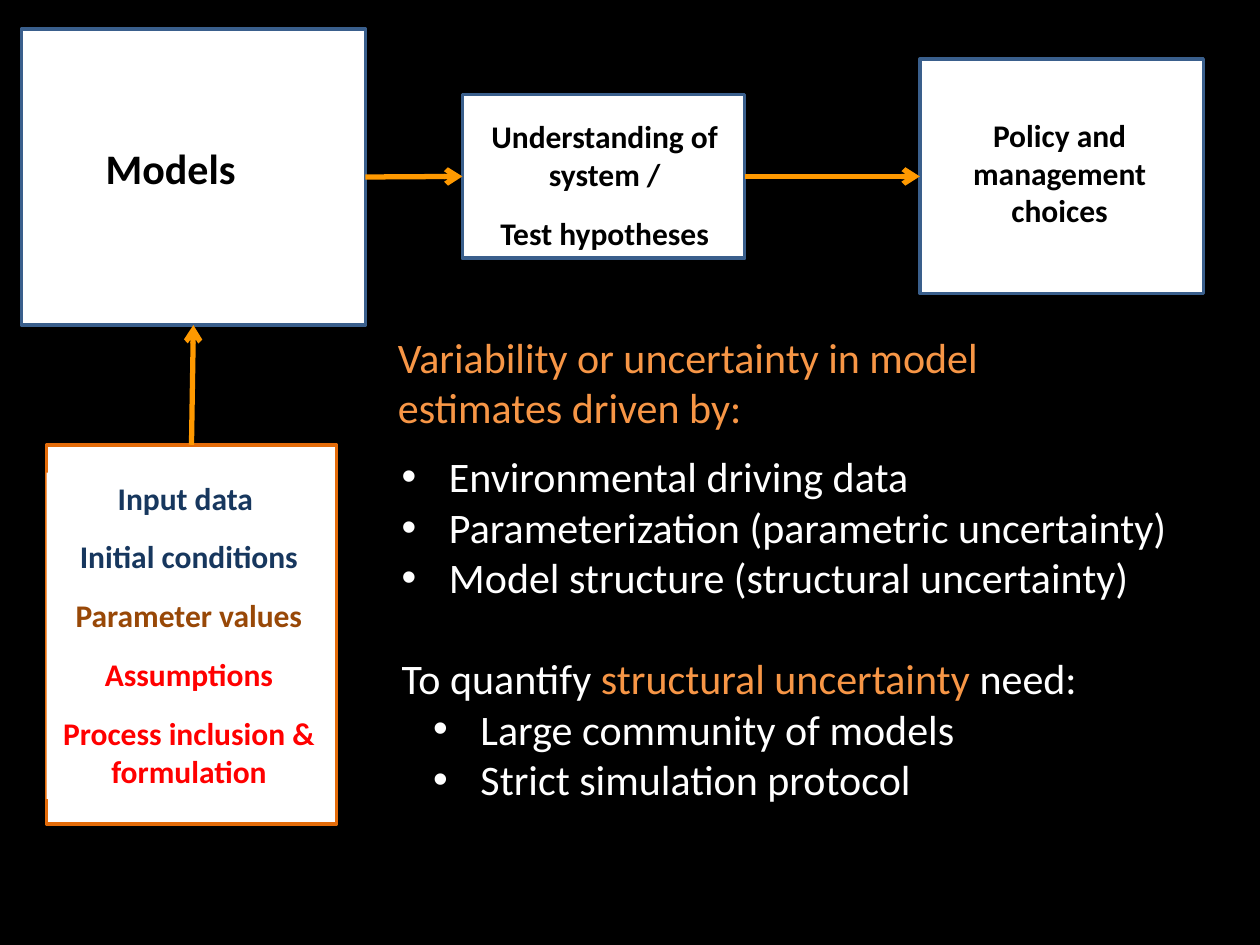
from dataclasses import dataclass

import lxml.etree
import pptx
import pptx.dml.color
import pptx.enum.shapes
import pptx.enum.text
import pptx.oxml.ns
import pptx.util

COLS, ROWS = 100, 75


@dataclass(frozen=True)
class Theme:
    font: str = "Calibri"
    back: str = "000000"
    white: str = "FFFFFF"
    black: str = "000000"
    blue: str = "3A5F8C"
    navy: str = "17375E"
    brown: str = "984807"
    red: str = "FF0000"
    rust: str = "E46C0A"
    amber: str = "FF9900"
    peach: str = "F79646"
    small: int = 18
    large: int = 24
    edge: int = 2
    arrow: int = 3


@dataclass(frozen=True)
class Area:
    col: float
    row: float
    wide: float
    high: float


@dataclass(frozen=True)
class Para:
    runs: tuple
    size: int
    bold: bool = False
    mid: bool = False
    before: float = 0
    after: float = 0
    indent: float = 0


THEME = Theme()
DECK = pptx.Presentation()
DECK.slide_width = pptx.util.Inches(10)
DECK.slide_height = pptx.util.Inches(7.5)


def across(cols: float) -> int:
    return round(DECK.slide_width * cols / COLS)


def down(rows: float) -> int:
    return round(DECK.slide_height * rows / ROWS)


def place(area: Area) -> tuple:
    return across(area.col), down(area.row), across(area.wide), down(area.high)


def tint(code: str) -> pptx.dml.color.RGBColor:
    return pptx.dml.color.RGBColor.from_string(code)


def child(parent, tag: str, **attrs: str) -> None:
    lxml.etree.SubElement(parent, pptx.oxml.ns.qn(tag), **attrs)


def add_box(slide, area: Area, edge: str):
    box = slide.shapes.add_shape(
        pptx.enum.shapes.MSO_SHAPE.FLOWCHART_PROCESS, *place(area))
    box.shadow.inherit = False
    box.fill.solid()
    box.fill.fore_color.rgb = tint(THEME.white)
    box.line.color.rgb = tint(edge)
    box.line.width = pptx.util.Pt(THEME.edge)
    return box


def add_arrow(slide, start, out: int, end, into: int) -> None:
    line = slide.shapes.add_connector(
        pptx.enum.shapes.MSO_CONNECTOR.STRAIGHT, 0, 0, 0, 0)
    line.begin_connect(start, out)
    line.end_connect(end, into)
    line.line.color.rgb = tint(THEME.amber)
    line.line.width = pptx.util.Pt(THEME.arrow)
    child(line.line._get_or_add_ln(), "a:tailEnd", type="arrow")
    child(line._element.spPr, "a:effectLst")


def fill_para(item, para: Para) -> None:
    if para.indent:
        props = item._p.get_or_add_pPr()
        props.set("marL", str(across(para.indent)))
        props.set("indent", str(-across(3.75)))
        child(props, "a:buFont", typeface="Arial")
        child(props, "a:buChar", char="•")
    if para.mid:
        item.alignment = pptx.enum.text.PP_ALIGN.CENTER
    item.space_before = pptx.util.Pt(para.before)
    item.space_after = pptx.util.Pt(para.after)
    item.font.name = THEME.font
    item.font.size = pptx.util.Pt(para.size)
    item.font.bold = para.bold
    if len(para.runs) == 1:
        item.font.color.rgb = tint(para.runs[0][1])
    for text, color in para.runs:
        run = item.add_run()
        run.text = text
        if len(para.runs) > 1:
            run.font.color.rgb = tint(color)


def add_text(slide, area: Area, paras: list[Para], fill: str = "") -> None:
    box = slide.shapes.add_textbox(*place(area))
    if fill:
        box.fill.solid()
        box.fill.fore_color.rgb = tint(fill)
    frame = box.text_frame
    frame.word_wrap = True
    frame.auto_size = pptx.enum.text.MSO_AUTO_SIZE.SHAPE_TO_FIT_TEXT
    for rank, para in enumerate(paras):
        fill_para(frame.add_paragraph() if rank else frame.paragraphs[0], para)


def label(text: str, color: str = THEME.black, after: float = 12) -> Para:
    return Para(((text, color),), THEME.small, bold=True, mid=True, after=after)


def bullet(text: str, indent: float) -> Para:
    return Para(((text, THEME.white),), THEME.large, indent=indent)


def main() -> None:
    slide = DECK.slides.add_slide(DECK.slide_layouts[6])
    slide.background.fill.solid()
    slide.background.fill.fore_color.rgb = tint(THEME.back)

    models = add_box(slide, Area(1.7, 2.3, 27.3, 23.5), THEME.blue)
    add_text(slide, Area(7.4, 10.8, 14.2, 5),
             [Para((("Models", THEME.black),), THEME.large, bold=True)])

    policy = add_box(slide, Area(73, 4.7, 22.5, 18.6), THEME.blue)
    add_text(slide, Area(74.4, 8.7, 19.4, 10.1),
             [label("Policy and management choices", after=0)])

    inputs = add_box(slide, Area(3.7, 35.3, 23, 30.1), THEME.rust)
    add_text(slide, Area(3.7, 37.5, 22.6, 25.9), [
        label("Input data ", THEME.navy),
        label("Initial conditions", THEME.navy),
        label("Parameter values", THEME.brown),
        label("Assumptions", THEME.red),
        label("Process inclusion & formulation", THEME.red),
    ], THEME.white)

    insight = add_box(slide, Area(36.7, 7.5, 22.4, 13), THEME.blue)
    add_text(slide, Area(36.7, 8.8, 22.6, 11.8),
             [label("Understanding of system /"), label("Test hypotheses")])

    add_arrow(slide, inputs, 0, models, 2)
    add_arrow(slide, models, 3, insight, 1)
    add_arrow(slide, insight, 3, policy, 1)

    add_text(slide, Area(30.6, 25.8, 61.4, 9.1), [Para(
        (("Variability or uncertainty in model estimates driven by:",
          THEME.peach),), THEME.large)])
    add_text(slide, Area(30.9, 35.3, 68, 29.3), [
        bullet("Environmental driving data", 3.75),
        bullet("Parameterization (parametric uncertainty)", 3.75),
        bullet("Model structure (structural uncertainty)", 3.75),
        Para((("To quantify ", THEME.white),
              ("structural uncertainty", THEME.peach),
              (" need:", THEME.white)), THEME.large, before=29),
        bullet("Large community of models", 6.25),
        bullet("Strict simulation protocol", 6.25),
    ])
    DECK.save("out.pptx")


if __name__ == "__main__":
    main()
